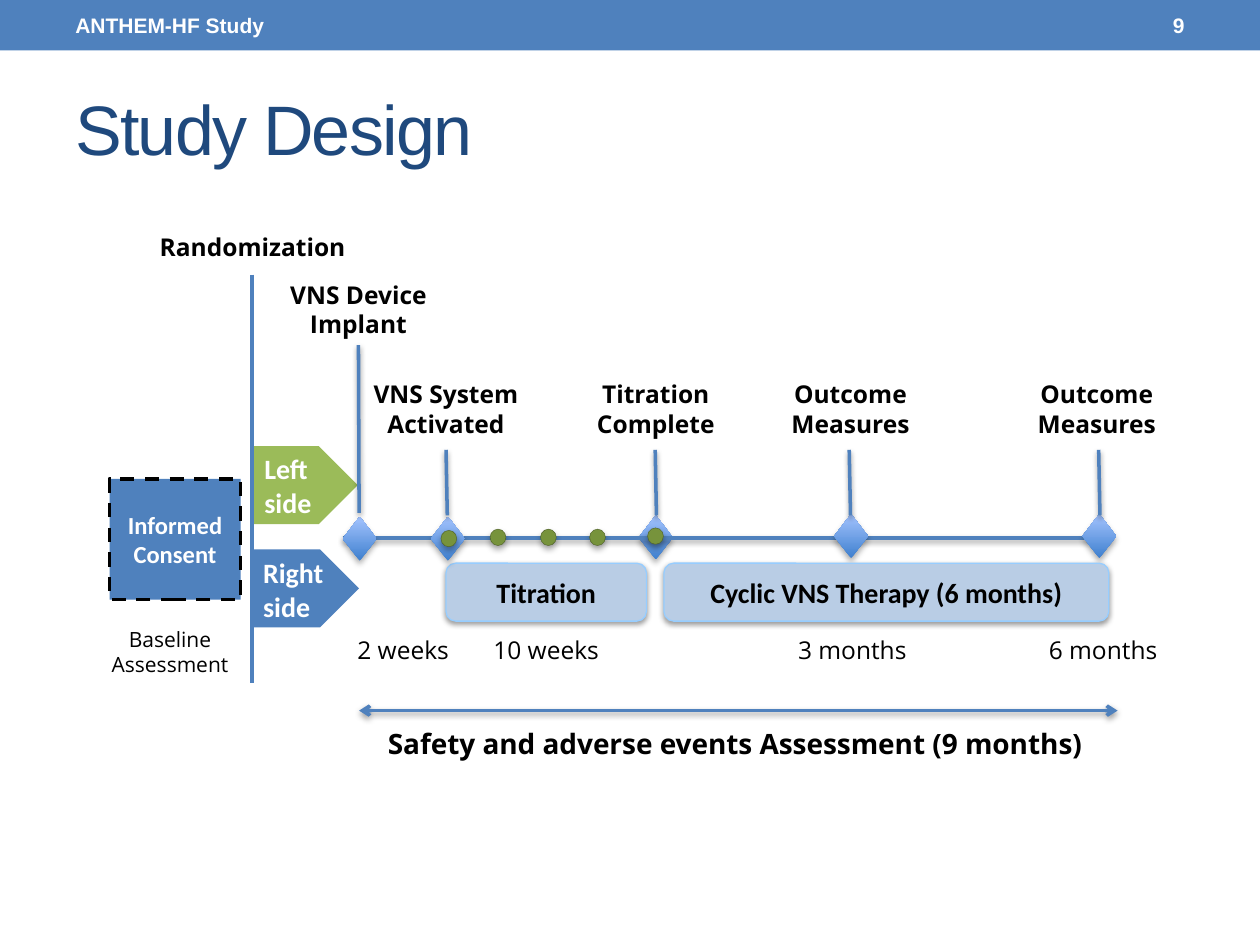
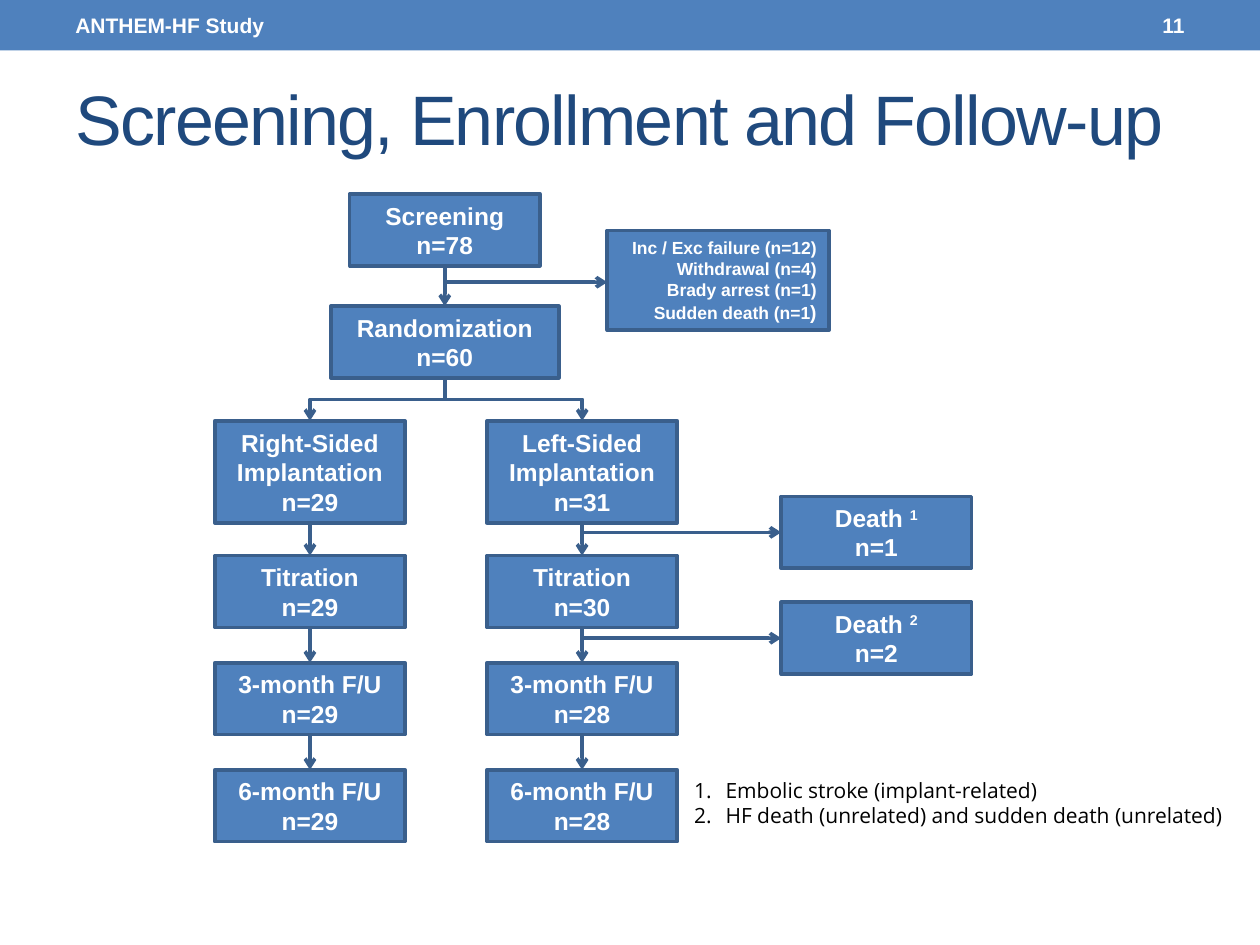
from lxml import etree
from pptx import Presentation
from pptx.dml.color import RGBColor
from pptx.enum import dml, shapes, text
from pptx.oxml import ns
from pptx.util import Inches, Pt

WIDE, HIGH = Inches(10), Inches(7.5)
COL, ROW = WIDE / 100, HIGH / 75

BLUE = RGBColor(0x4F, 0x81, 0xBD)
EDGE = RGBColor(0x3A, 0x5F, 0x8C)
NAVY = RGBColor(0x1F, 0x49, 0x7D)
GREEN = RGBColor(0x9B, 0xBB, 0x59)
OLIVE = RGBColor(0x77, 0x93, 0x3C)
MOSS = RGBColor(0x4F, 0x62, 0x28)
PALE = RGBColor(0xB9, 0xCD, 0xE5)
SKY = RGBColor(0x97, 0xCD, 0xFF)
DEEP = RGBColor(0x3F, 0x80, 0xCE)
LIGHT = RGBColor(0xA4, 0xC4, 0xFF)
WHITE = RGBColor(0xFF, 0xFF, 0xFF)
BLACK = RGBColor(0, 0, 0)

KIND = shapes.MSO_SHAPE
LEFT, MID, RIGHT = text.PP_ALIGN.LEFT, text.PP_ALIGN.CENTER, text.PP_ALIGN.RIGHT
TOP, CENTER = text.MSO_ANCHOR.TOP, text.MSO_ANCHOR.MIDDLE
SOFT, DROP = (38, 3.1, 1.6), (32, 3.5, 2.2)
NODE_W, NODE_H = 15.1, 5.7


def place(x, y, w, h):
    return round(x * COL), round(y * ROW), round(w * COL), round(h * ROW)


def child(node, tag, **attrs):
    return etree.SubElement(node, ns.qn(tag), {k: str(v) for k, v in attrs.items()})


def glow(effects, shade):
    alpha, blur, dist = shade
    outer = child(effects, "a:outerShdw", blurRad=Pt(blur), dist=Pt(dist),
                  dir=5400000, rotWithShape=0)
    child(child(outer, "a:srgbClr", val="000000"), "a:alpha", val=alpha * 1000)


def write(box, lines, size, color, face, bold=True, align=MID, anchor=CENTER, number=False):
    frame = box.text_frame
    frame.word_wrap = True
    frame.vertical_anchor = anchor
    for i, line in enumerate(lines.split("\n")):
        para = frame.paragraphs[0] if i == 0 else frame.add_paragraph()
        main, _, mark = line.partition("^")
        para.add_run().text = main
        if mark:
            run = para.add_run()
            run.text = mark
            run.font._element.set("baseline", "30000")
        para.alignment = align
        if number:
            props = para._p.get_or_add_pPr()
            props.set("marL", str(Inches(0.51)))
            props.set("indent", str(-Inches(0.25)))
            child(props, "a:buFont", typeface="+mj-lt")
            child(props, "a:buAutoNum", type="arabicPeriod")
        font = para.font
        font.name, font.size, font.bold = face, Pt(size), bold
        font.color.rgb = color
    return frame


def label(slide, area, lines, size=14, color=BLACK, face="Open Sans", anchor=TOP, **look):
    box = slide.shapes.add_textbox(*place(*area))
    return write(box, lines, size, color, face, anchor=anchor, **look)


def block(slide, kind, area, fill, edge=None, width=0, shade=None):
    box = slide.shapes.add_shape(kind, *place(*area))
    if fill:
        box.fill.solid()
        box.fill.fore_color.rgb = fill
    if edge is not None:
        box.line.color.rgb = edge
        box.line.width = Pt(width)
    else:
        box.line.fill.background()
    box.shadow.inherit = False
    if shade:
        glow(box._element.spPr.find(ns.qn("a:effectLst")), shade)
    return box


def link(slide, x1, y1, x2, y2, color=EDGE, width=2.08, ends=("tailEnd",), shade=None,
         kind=shapes.MSO_CONNECTOR.STRAIGHT):
    wire = slide.shapes.add_connector(kind, *place(x1, y1, x2, y2))
    wire.line.color.rgb = color
    wire.line.width = Pt(width)
    for end in ends:
        child(wire.line._get_or_add_ln(), "a:" + end, type="arrow")
    effects = child(wire._element.spPr, "a:effectLst")
    if shade:
        glow(effects, shade)
    return wire


def fork(slide, x1, y1, x2, y2):
    side = 1 if x2 < x1 else -1
    cx, cy = (x1 + x2) / 2, (y1 + y2) / 2
    run, drop = abs(x2 - x1) / 2, side * (y2 - y1) / 2
    wire = link(slide, cx - drop, cy - run, cx + drop, cy + run,
                kind=shapes.MSO_CONNECTOR.ELBOW)
    turn = 90 * side % 360
    wire._element.spPr.find(ns.qn("a:xfrm")).set("rot", str(turn * 60000))


def page(deck, title, number, top, high):
    slide = deck.slides.add_slide(deck.slide_layouts[6])
    block(slide, KIND.RECTANGLE, (0, 0, 100, 4), BLUE)
    frame = label(slide, (5, top, 90, high), title, 40, NAVY, "Arial", bold=False, align=LEFT)
    frame.margin_top = Inches(0.1)
    frame.paragraphs[0].font._element.set("spc", "-100")
    for x, w, words, align in ((5, 31.7, "ANTHEM-HF Study", LEFT), (83.3, 11.7, number, RIGHT)):
        label(slide, (x, 0.2, w, 3.6), words, 12, WHITE, "Arial", CENTER, align=align)
    return slide


def gem(slide, x, y):
    box = block(slide, KIND.FLOWCHART_DECISION, (x, y, 2.7, 3.5), None, shade=DROP)
    box.fill.gradient()
    box.fill.gradient_angle = 90
    for stop, color, spot in zip(box.fill.gradient_stops, (DEEP, LIGHT), (0, 1)):
        stop.color.rgb = color
        stop.position = spot


def dot(slide, x, y):
    block(slide, KIND.FLOWCHART_CONNECTOR, (x, y, 1.25, 1.3), OLIVE, MOSS, 0.25, DROP)


def design(deck):
    slide = page(deck, "Study Design", "9", 5.8, 10.8)
    for x, w, words in ((26.8, 10.4, "2 weeks"), (36.7, 13.3, "10 weeks"),
                        (61, 13.3, "3 months"), (80.9, 13.3, "6 months")):
        label(slide, (x, 49.9, w, 3.4), words, bold=False)

    for area, fill, words, anchor in (((19.9, 43.6, 8.6, 6.2), BLUE, "Right side", TOP),
                                      ((20, 35.4, 8.4, 6.2), GREEN, "Left side", CENTER)):
        arm = block(slide, KIND.PENTAGON, area, fill)
        write(arm, words, 16, WHITE, "Calibri", align=LEFT, anchor=anchor)
    consent = block(slide, KIND.RECTANGLE, (8.7, 38, 10.4, 9.6), BLUE, BLACK, 2)
    consent.line.dash_style = dml.MSO_LINE.DASH
    write(consent, "Informed Consent", 14, WHITE, "Calibri")

    gem(slide, 50.7, 40.9)
    link(slide, 27.2, 42.7, 88, 42.7, BLUE, 2, (), SOFT)
    for x, y in ((27.2, 41), (85.9, 40.8), (66.2, 40.8)):
        gem(slide, x, y)
    for x, y in ((38.9, 42), (42.9, 42), (46.8, 42), (51.4, 41.9)):
        dot(slide, x, y)
    for x, w, words in ((52.7, 35.3, "Cyclic VNS Therapy (6 months)"), (35.4, 15.9, "Titration")):
        phase = block(slide, KIND.ROUNDED_RECTANGLE, (x, 44.7, w, 4.6), PALE, SKY, 0.75, SOFT)
        write(phase, words, 16, BLACK, "Calibri")
    gem(slide, 34.2, 41)
    dot(slide, 35, 42.1)

    for area, words in (((9.3, 17.9, 21.5, 3.4), "Randomization"),
                        ((21.7, 21.7, 13.5, 5.7), "VNS Device Implant"),
                        ((27.7, 29.6, 15.4, 5.7), "VNS System Activated"),
                        ((45.3, 29.6, 13.5, 5.7), "Titration Complete"),
                        ((59.9, 29.6, 15.2, 5.7), "Outcome Measures"),
                        ((79.1, 29.6, 15.9, 5.7), "Outcome Measures")):
        label(slide, area, words)
    label(slide, (6.1, 49.2, 14.8, 5), "Baseline\nAssessment", 12, bold=False)
    label(slide, (26.8, 57.2, 63.1, 3.7), "Safety and adverse events Assessment (9 months)", 16)

    link(slide, 20, 21.8, 20, 54.2, BLUE, 2.25, ())
    link(slide, 28.5, 40.7, 28.45, 27.4, BLUE, 2, (), SOFT)
    link(slide, 28.5, 56.4, 88.7, 56.4, BLUE, 2, ("headEnd", "tailEnd"), SOFT)
    for x in (35.5, 52.1, 67.5, 87.3):
        link(slide, x, 40.9, x - 0.1, 35.7, BLUE, 2, (), SOFT)


def node(slide, x, y, words, w=NODE_W, h=NODE_H, size=14, align=MID):
    box = block(slide, KIND.RECTANGLE, (x - w / 2, y, w, h), BLUE, EDGE, 2.08)
    return write(box, words, size, WHITE, "Arial", align=align)


def flow(deck):
    slide = page(deck, "Screening, Enrollment and Follow-up", "11", 5, 8.2)
    hub, exits = 35.3, 69.55
    node(slide, hub, 15.4, "Screening\nn=78")
    node(slide, hub, 24.3, "Randomization\nn=60", w=18.1)
    link(slide, hub, 21.1, hub, 24.3)
    link(slide, hub, 22.4, 48.2, 22.4)
    losses = node(slide, 57, 18.3, "Inc / Exc failure (n=12)\nWithdrawal (n=4)\n"
                  "Brady arrest (n=1)\nSudden death (n=1", 17.6, 7.9, 10, RIGHT)
    close = losses.paragraphs[-1].add_run()
    close.text = ")"
    close.font.size = Pt(11)

    steps = ("Titration", "3-month F/U", "6-month F/U")
    for x, side, first, counts in ((24.6, "Right", 29, (29, 29, 29)),
                                   (46.2, "Left", 31, (30, 28, 28))):
        fork(slide, hub, 30, x, 33.4)
        node(slide, x, 33.4, f"{side}-Sided\nImplantation\nn={first}", h=8.1)
        foot = 41.5
        for i, (step, count) in enumerate(zip(steps, counts)):
            y = 44.1 + 8.5 * i
            link(slide, x, foot, x, y)
            node(slide, x, y, f"{step}\nn={count}")
            foot = y + NODE_H

    for count, y in ((1, 39.4), (2, 47.8)):
        node(slide, exits, y, f"Death ^{count}\nn={count}")
        link(slide, 46.2, y + NODE_H / 2, exits - NODE_W / 2, y + NODE_H / 2)
    label(slide, (51.5, 61.2, 48.5, 5), "Embolic stroke (implant-related)\n"
          "HF death (unrelated) and sudden death (unrelated)", 12,
          bold=False, align=LEFT, number=True)


def main():
    deck = Presentation()
    deck.slide_width, deck.slide_height = WIDE, HIGH
    design(deck)
    flow(deck)
    deck.save("out.pptx")


if __name__ == "__main__":
    main()
